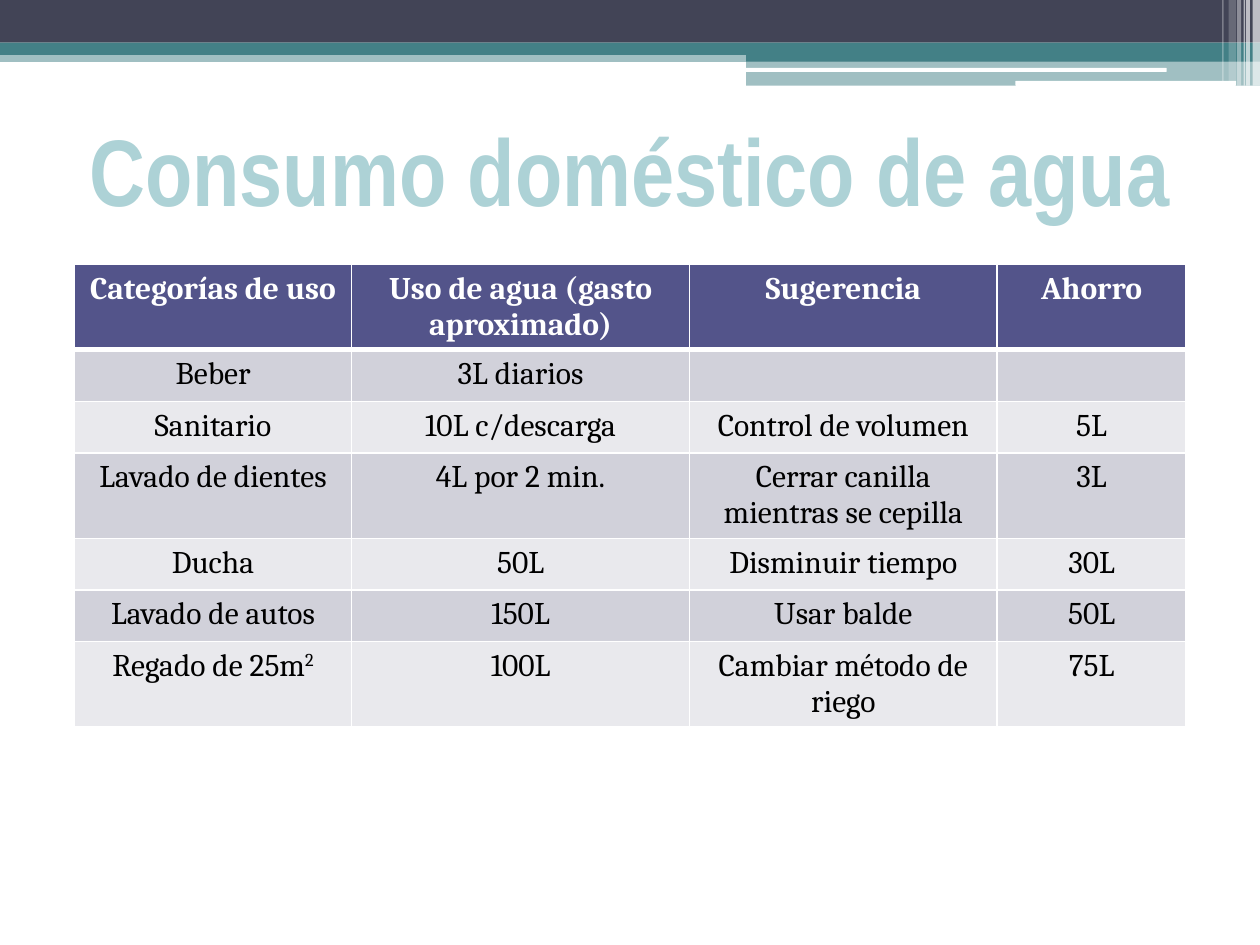
from dataclasses import dataclass

from lxml.etree import SubElement
from pptx import Presentation
from pptx.dml.color import RGBColor
from pptx.enum.shapes import MSO_SHAPE
from pptx.enum.text import MSO_AUTO_SIZE, PP_ALIGN
from pptx.oxml.ns import qn
from pptx.util import Cm, Pt


@dataclass(frozen=True)
class Theme:
    navy: str = "424456"
    teal: str = "438086"
    white: str = "FFFFFF"
    black: str = "000000"
    title: str = "ADD2D6"
    header: str = "53548A"
    bands: tuple = ("D1D1DA", "E9E9ED")
    title_font: str = "Arial Narrow"
    body_font: str = "Cambria"
    title_size: int = 54
    body_size: int = 18


@dataclass(frozen=True)
class Bar:
    left: float
    top: float
    width: float
    height: float
    color: str
    alpha: int = 100
    rounded: bool = False


THEME = Theme()
WIDTH, SPLIT = 25.4, 15.04
BARS = [
    Bar(0, 1.02, WIDTH, 0.23, THEME.teal, 50),
    Bar(0, 0, WIDTH, 0.86, THEME.navy),
    Bar(0, 0.86, WIDTH, 0.25, THEME.teal),
    Bar(SPLIT, 0.99, WIDTH - SPLIT, 0.25, THEME.teal),
    Bar(SPLIT, 1.22, WIDTH - SPLIT, 0.51, THEME.teal, 50),
    Bar(15.01, 1.37, 8.51, 0.08, THEME.white, rounded=True),
    Bar(20.47, 1.63, 4.45, 0.1, THEME.white, rounded=True),
] + [
    Bar(left, 0, width, height, THEME.white, alpha)
    for left, width, height, alpha in [
        (25.25, 0.15, 1.73, 65),
        (25.12, 0.08, 1.73, 65),
        (25.07, 0.03, 1.73, 60),
        (24.94, 0.08, 1.73, 40),
        (24.77, 0.15, 1.63, 20),
        (24.64, 0.03, 1.63, 30),
    ]
]
COLUMNS = (5.59, 6.81, 6.2, 3.81)
ROW_HEIGHT = 1.04
ROWS = [
    ("Categorías de uso", "Uso de agua (gasto aproximado)", "Sugerencia", "Ahorro"),
    ("Beber", "3L diarios", "", ""),
    ("Sanitario", "10L c/descarga", "Control de volumen", "5L"),
    ("Lavado de dientes", "4L por 2 min.", "Cerrar canilla mientras se cepilla", "3L"),
    ("Ducha", "50L", "Disminuir tiempo", "30L"),
    ("Lavado de autos", "150L", "Usar balde", "50L"),
    ("Regado de 25m^2", "100L", "Cambiar método de riego", "75L"),
]


def add_bar(s, bar: Bar) -> None:
    """Draw one borderless band of the page header."""
    kind = MSO_SHAPE.ROUNDED_RECTANGLE if bar.rounded else MSO_SHAPE.RECTANGLE
    sp = s.shapes.add_shape(kind, Cm(bar.left), Cm(bar.top), Cm(bar.width), Cm(bar.height))
    sp.shadow.inherit = False
    sp.line.fill.background()
    sp.fill.solid()
    sp.fill.fore_color.rgb = RGBColor.from_string(bar.color)
    if bar.alpha < 100:
        color = sp.fill._xPr.find(qn("a:solidFill"))[0]
        SubElement(color, qn("a:alpha"), val=str(bar.alpha * 1000))


def write(tf, text: str, *, font: str, size: int, color: str, bold: bool = False) -> None:
    """Write a centred paragraph, with a caret starting a superscript."""
    p = tf.paragraphs[0]
    p.alignment = PP_ALIGN.CENTER
    for i, part in enumerate(text.split("^")):
        if not part:
            continue
        r = p.add_run()
        r.text = part
        r.font.name, r.font.size, r.font.bold = font, Pt(size), bold
        r.font.color.rgb = RGBColor.from_string(color)
        if i:
            r.font._element.set("baseline", "30000")


def set_borders(cell, bottom: float) -> None:
    """Give a cell white borders, with its own bottom width in points."""
    tc_pr = cell._tc.get_or_add_tcPr()
    for side, width in (("L", 1), ("R", 1), ("T", 1), ("B", bottom)):
        ln = SubElement(tc_pr, qn(f"a:ln{side}"), w=str(Pt(width)))
        SubElement(SubElement(ln, qn("a:solidFill")), qn("a:srgbClr"), val=THEME.white)


def add_usage_table(s, left: float, top: float) -> None:
    """Draw the water usage table."""
    table = s.shapes.add_table(len(ROWS), len(COLUMNS), Cm(left), Cm(top),
                               Cm(sum(COLUMNS)), Cm(ROW_HEIGHT * len(ROWS))).table
    for column, width in zip(table.columns, COLUMNS):
        column.width = Cm(width)
    for i, texts in enumerate(ROWS):
        table.rows[i].height = Cm(ROW_HEIGHT)
        is_header = i == 0
        fill = THEME.header if is_header else THEME.bands[(i - 1) % 2]
        for j, text in enumerate(texts):
            cell = table.cell(i, j)
            bottom_width = 3 if is_header else 1
            set_borders(cell, bottom_width)
            if i == 1:
                cell._tc.tcPr.find(qn("a:lnT")).set("w", str(Pt(3)))
            cell.fill.solid()
            cell.fill.fore_color.rgb = RGBColor.from_string(fill)
            write(cell.text_frame, text, font=THEME.body_font, size=THEME.body_size,
                  color=THEME.white if is_header else THEME.black, bold=is_header)


def add_title(s, text: str) -> None:
    """Draw the slide title."""
    tf = s.shapes.add_textbox(Cm(1.04), Cm(2.13), Cm(23.32), Cm(2.57)).text_frame
    tf.word_wrap = False
    tf.auto_size = MSO_AUTO_SIZE.SHAPE_TO_FIT_TEXT
    write(tf, text, font=THEME.title_font, size=THEME.title_size,
          color=THEME.title, bold=True)


def main() -> None:
    """Build and save the slide."""
    prs = Presentation()
    prs.slide_width, prs.slide_height = Cm(WIDTH), Cm(19.05)
    s = prs.slides.add_slide(prs.slide_layouts[6])
    for bar in BARS:
        add_bar(s, bar)
    add_usage_table(s, 1.5, 5.33)
    add_title(s, "Consumo doméstico de agua")
    prs.save("out.pptx")


if __name__ == "__main__":
    main()
